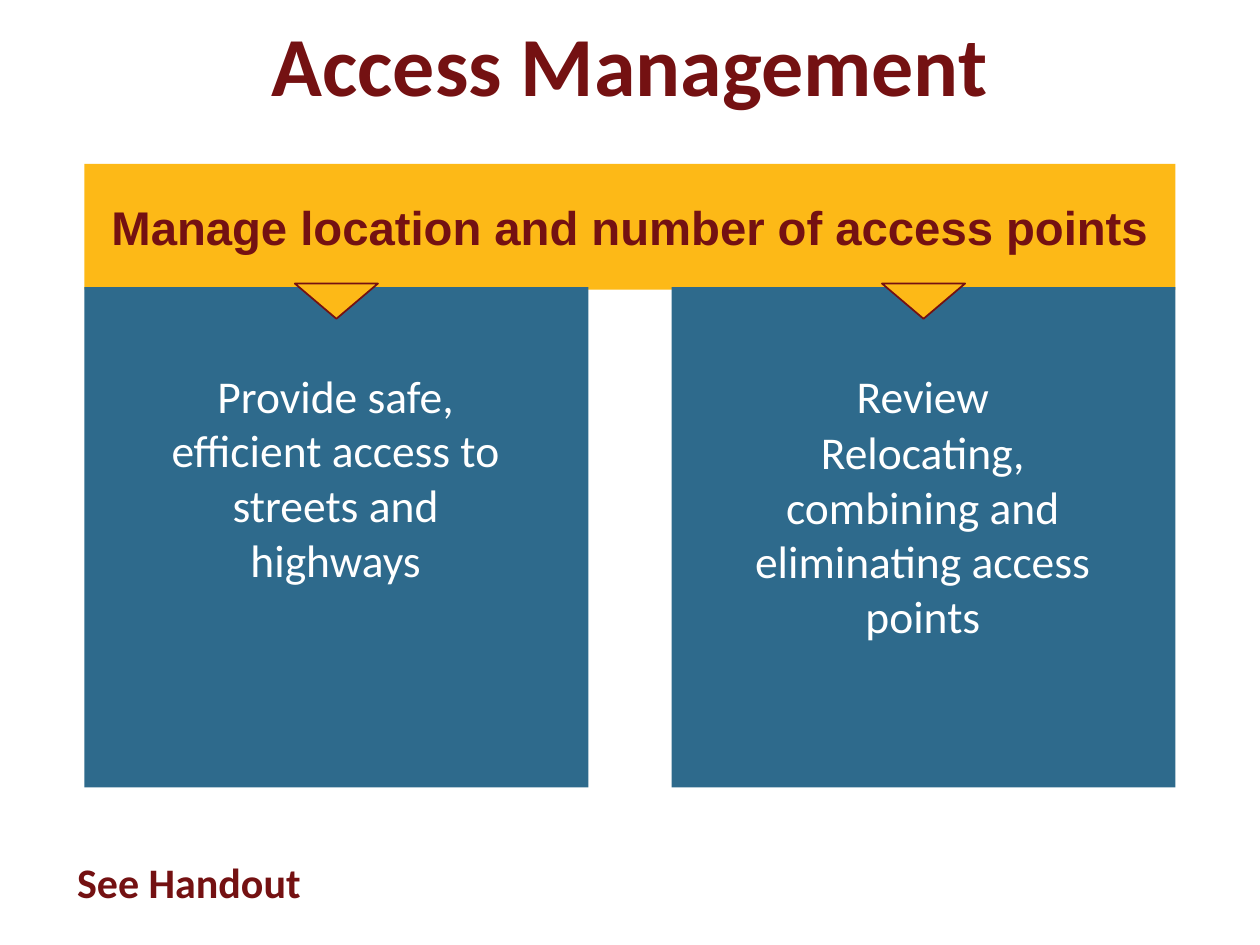
from pptx import Presentation
from pptx.dml.color import RGBColor
from pptx.enum.shapes import MSO_SHAPE as Shape
from pptx.enum.text import MSO_ANCHOR as Anchor, PP_ALIGN as Align
from pptx.util import Inches, Pt

COLORS = {"maroon": "741112", "gold": "FDB917", "blue": "2E6A8C", "white": "FFFFFF"}
FORMATS = {
    "title": {"name": "Calibri", "size": Pt(48), "bold": True},
    "banner": {"name": "Arial", "size": Pt(27), "bold": True},
    "note": {"name": "Calibri", "size": Pt(24), "bold": True},
    "panel": {"name": "Calibri", "size": Pt(26), "bold": False},
}


class SlideBuilder:
    def __init__(self, slide, colors, formats):
        self.slide = slide
        self.colors = colors
        self.formats = formats

    def color(self, name):
        return RGBColor.from_string(self.colors[name])

    def fill(self, shape, name):
        shape.shadow.inherit = False
        shape.fill.solid()
        shape.fill.fore_color.rgb = self.color(name)

    def rectangle(self, left, top, width, height, color):
        shape = self.slide.shapes.add_shape(
            Shape.RECTANGLE, Inches(left), Inches(top), Inches(width), Inches(height)
        )
        self.fill(shape, color)
        shape.line.fill.background()

    def pointer(self, left, top, width, height):
        builder = self.slide.shapes.build_freeform(Inches(left), Inches(top))
        corners = [(left + width, top), (left + width / 2, top + height)]
        builder.add_line_segments([(Inches(x), Inches(y)) for x, y in corners], close=True)
        shape = builder.convert_to_shape()
        self.fill(shape, "gold")
        shape.line.color.rgb = self.color("maroon")
        shape.line.width = Pt(1)

    def text(self, left, top, width, height, paragraphs, style,
             color="maroon", anchor=Anchor.MIDDLE, margins=None):
        box = self.slide.shapes.add_textbox(
            Inches(left), Inches(top), Inches(width), Inches(height)
        )
        frame = box.text_frame
        frame.word_wrap = True
        frame.vertical_anchor = anchor
        for side, margin in (margins or {}).items():
            setattr(frame, f"margin_{side}", Inches(margin))
        for index, content in enumerate(paragraphs):
            paragraph = frame.add_paragraph() if index else frame.paragraphs[0]
            paragraph.alignment = Align.CENTER
            paragraph.space_before = Pt(1 if index else 0)
            run = paragraph.add_run()
            run.text = content
            for key, value in self.formats[style].items():
                setattr(run.font, key, value)
            run.font.color.rgb = self.color(color)

    def panel(self, left, height, paragraphs):
        self.rectangle(left, 2.28, 4, 3.97, "blue")
        self.pointer(left + 1.67, 2.25, 0.66, 0.28)
        self.text(
            left + 0.53, 2.9, 2.93, height, paragraphs, "panel", "white", Anchor.TOP,
            {"left": 0, "top": 0.02, "right": 0, "bottom": 0},
        )


def main():
    presentation = Presentation()
    presentation.slide_width = Inches(10)
    presentation.slide_height = Inches(7.5)
    slide = presentation.slides.add_slide(presentation.slide_layouts[6])
    builder = SlideBuilder(slide, COLORS, FORMATS)

    banner = (0.67, 1.3, 8.66, 1)
    builder.rectangle(*banner, "gold")
    builder.text(*banner, ["Manage location and number of access points"], "banner")
    builder.text(0.5, 0, 9, 1, ["Access Management"], "title")
    builder.text(0.5, 6.75, 2, 0.5, ["See Handout"], "note")

    builder.panel(0.67, 1.57, ["Provide safe, efficient access to streets and highways"])
    builder.panel(
        5.33, 2.22, ["Review", "Relocating, combining and eliminating access points"]
    )
    presentation.save("out.pptx")


if __name__ == "__main__":
    main()
